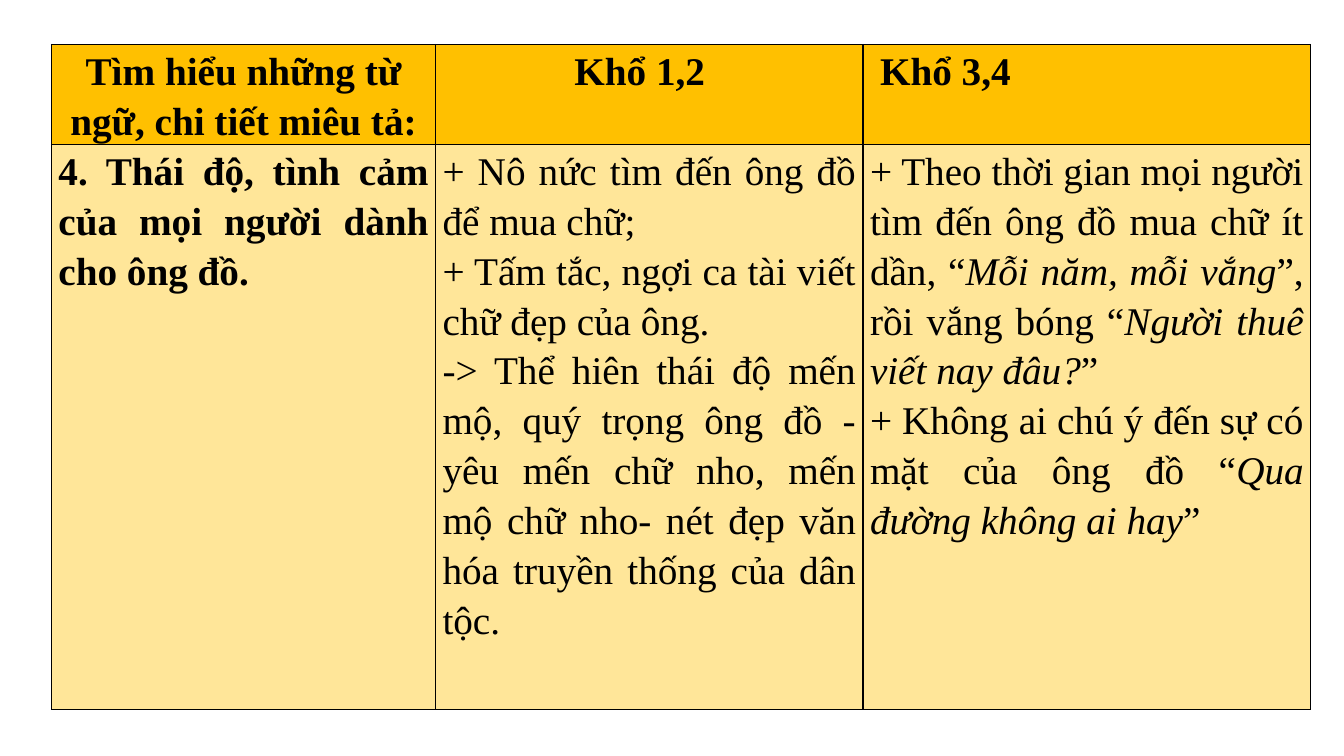
from lxml import etree
from pptx import Presentation
from pptx import util as u
from pptx.dml.color import RGBColor
from pptx.enum import text
from pptx.oxml import ns

# Content: rows of cells, each a list of paragraphs; *...* is italic
ROWS = [
    [
        ["Tìm hiểu những từ ngữ, chi tiết miêu tả:"],
        ["Khổ 1,2"],
        ["Khổ 3,4"],
    ],
    [
        ["4. Thái độ, tình cảm của mọi người dành cho ông đồ."],
        [
            "+ Nô nức tìm đến ông đồ để mua chữ;",
            "+ Tấm tắc, ngợi ca tài viết chữ đẹp của ông.",
            "-> Thể hiên thái độ mến mộ, quý trọng ông đồ - yêu mến chữ nho, "
            "mến mộ chữ nho- nét đẹp văn hóa truyền thống của dân tộc.",
        ],
        [
            "+ Theo thời gian mọi người tìm đến ông đồ mua chữ ít dần, "
            "“*Mỗi năm, mỗi vắng*”, rồi vắng bóng “*Người thuê viết nay đâu?*”",
            "+ Không ai chú ý đến sự có mặt của ông đồ “*Qua đường không ai hay*”",
        ],
    ],
]
COLS = [3.81, 4.24, 4.44]
HIGH = [0.65, 5.61]
LEFT, TOP = 0.51, 0.44
PAD = 0.07
HEX = {"head": "FFC000", "body": "FFE699", "ink": "000000"}
FONT = {"name": "Times New Roman", "size": u.Pt(28)}

# Alignment and side margins that differ in the header
ALIGN = text.PP_ALIGN
HEAD = [ALIGN.CENTER, ALIGN.CENTER, ALIGN.LEFT]
SIDES = {(0, 1): (PAD, 0.26), (0, 2): (0.17, PAD)}


def frame(cell):
    """Draw a thin line on all four sides of a cell."""
    props = cell._tc.get_or_add_tcPr()
    for spot, side in enumerate("LRTB"):
        line = etree.Element(ns.qn("a:ln" + side), w=str(u.Pt(1)))
        fill = etree.SubElement(line, ns.qn("a:solidFill"))
        etree.SubElement(fill, ns.qn("a:srgbClr"), val=HEX["ink"])
        props.insert(spot, line)


def write(para, line, bold, align):
    """Fill a paragraph, switching italics at each star."""
    para.alignment = align
    para.line_spacing = 1.15
    for n, part in enumerate(line.split("*")):
        run = para.add_run()
        run.text = part
        look = {**FONT, "bold": bold, "italic": n % 2 == 1}
        for key, value in look.items():
            setattr(run.font, key, value)
        run.font.color.rgb = RGBColor.from_string(HEX["ink"])


def main():
    deck = Presentation()
    deck.slide_width, deck.slide_height = u.Inches(13.33), u.Inches(7.5)
    slide = deck.slides.add_slide(deck.slide_layouts[6])

    # Table grid
    box = [u.Inches(v) for v in (LEFT, TOP, sum(COLS), sum(HIGH))]
    table = slide.shapes.add_table(len(HIGH), len(COLS), *box).table
    for col, wide in zip(table.columns, COLS):
        col.width = u.Inches(wide)
    for row, high in zip(table.rows, HIGH):
        row.height = u.Inches(high)

    # Cells
    for r, row in enumerate(ROWS):
        for c, lines in enumerate(row):
            cell = table.cell(r, c)
            left, right = SIDES.get((r, c), (PAD, PAD))
            form = {"margin_left": left, "margin_right": right,
                    "margin_top": 0, "margin_bottom": 0}
            for key, value in form.items():
                setattr(cell, key, u.Inches(value))
            cell.fill.solid()
            tint = HEX["body" if r else "head"]
            cell.fill.fore_color.rgb = RGBColor.from_string(tint)
            frame(cell)
            body = cell.text_frame
            for n, line in enumerate(lines):
                para = body.add_paragraph() if n else body.paragraphs[0]
                align = ALIGN.JUSTIFY if r else HEAD[c]
                write(para, line, r == 0 or c == 0, align)

    deck.save("out.pptx")


if __name__ == "__main__":
    main()
